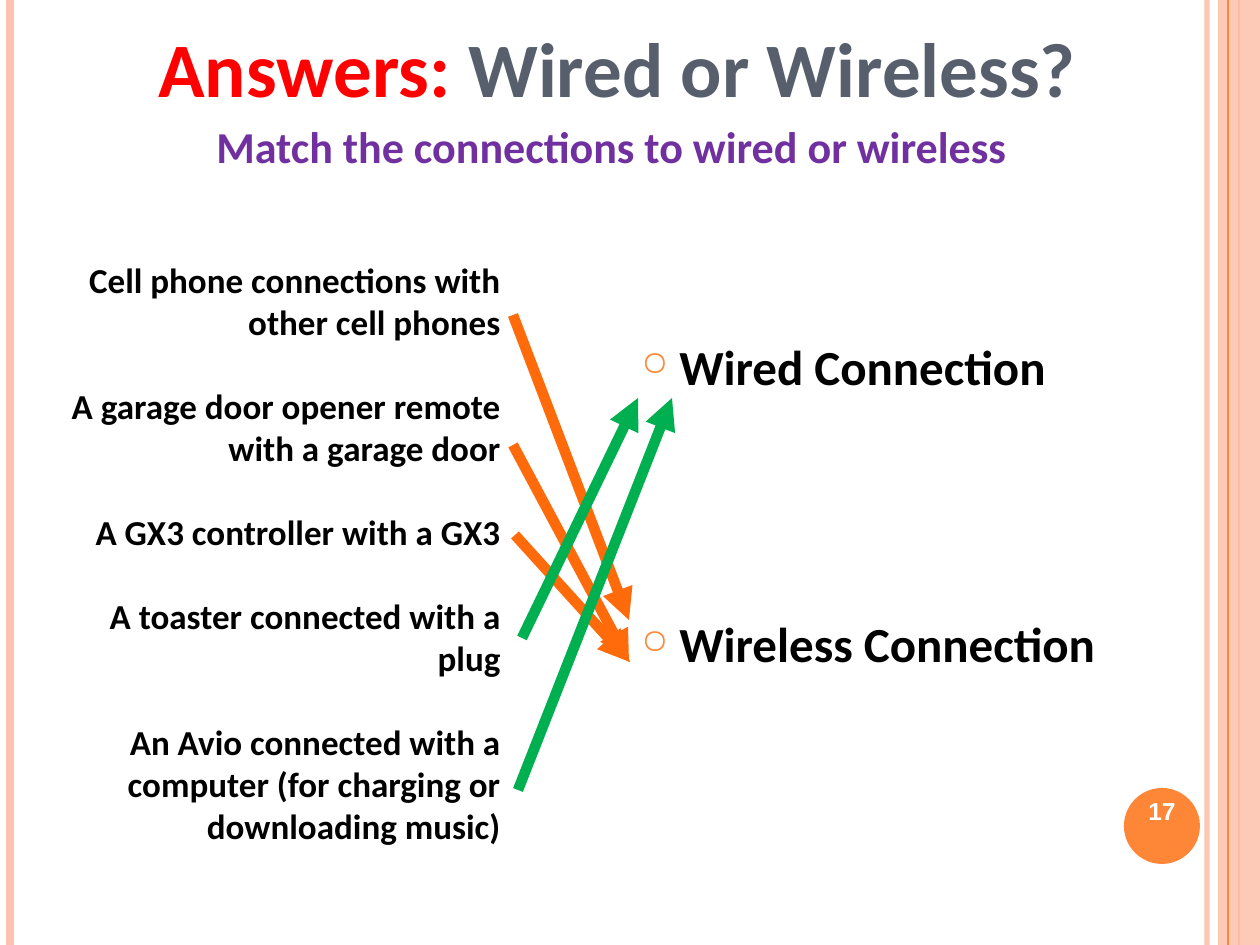
from dataclasses import dataclass
from typing import Optional

from lxml import etree
from pptx import Presentation
from pptx.dml.color import RGBColor
from pptx.enum import shapes, text
from pptx.oxml.ns import qn
from pptx.util import Emu, Pt

EMU_PER_PX = 914400 / 126
WIDTH, HEIGHT = 1260, 945

PEACH = RGBColor(0xFE, 0xC3, 0xAE)
ORANGE = RGBColor(0xFE, 0x86, 0x37)
WIRELESS = RGBColor(0xFF, 0x6B, 0x0A)
WIRED = RGBColor(0x00, 0xB0, 0x50)
RED = RGBColor(0xFF, 0x00, 0x00)
SLATE = RGBColor(0x57, 0x5F, 0x6D)
PURPLE = RGBColor(0x70, 0x30, 0xA0)
BLACK = RGBColor(0x00, 0x00, 0x00)
WHITE = RGBColor(0xFF, 0xFF, 0xFF)


@dataclass
class Line:
    start: tuple[int, int]
    end: tuple[int, int]
    color: RGBColor
    width: float = 6
    arrow: bool = True
    alpha: int = 100


@dataclass
class Span:
    words: str
    color: RGBColor


def stripe(x: int, color: RGBColor, width: float, alpha: int = 100) -> Line:
    return Line((x, 0), (x, HEIGHT), color, width, False, alpha)


LEFT_STRIPES = [stripe(1207, PEACH, 3, 93), stripe(10, PEACH, 4.5),
                stripe(1239, ORANGE, 1.5)]
EDGE_STRIPE = stripe(1228, ORANGE, 0.75)
ANSWERS = [
    Line((513, 315), (629, 620), WIRELESS),
    Line((513, 445), (629, 662), WIRELESS),
    Line((515, 535), (630, 662), WIRELESS),
    Line((522, 638), (638, 398), WIRED),
    Line((518, 790), (672, 398), WIRED),
]
DEVICES = [
    "Cell phone connections with other cell phones",
    "A garage door opener remote with a garage door",
    "A GX3 controller with a GX3",
    "A toaster connected with a plug",
    "An Avio connected with a computer (for charging or downloading music)",
]
CONNECTIONS = ["Wired Connection", "Wireless Connection"]


def px(length: int) -> Emu:
    return Emu(round(length * EMU_PER_PX))


def set_alpha(properties, percent: int) -> None:
    """Make every colour below the given properties element see-through."""
    for color in properties.iter(qn("a:srgbClr")):
        etree.SubElement(color, qn("a:alpha"), val=str(percent * 1000))


def draw_line(page, line: Line) -> None:
    connector = page.shapes.add_connector(
        shapes.MSO_CONNECTOR.STRAIGHT, *map(px, line.start + line.end))
    connector.line.color.rgb = line.color
    connector.line.width = Pt(line.width)
    properties = connector._element.spPr
    if line.alpha < 100:
        set_alpha(properties, line.alpha)
    if line.arrow:
        etree.SubElement(properties.find(qn("a:ln")), qn("a:tailEnd"), type="triangle")
    etree.SubElement(properties, qn("a:effectLst"))


def draw_shape(page, kind, bounds: tuple[int, int, int, int], color: RGBColor,
               alpha: int = 100) -> None:
    shape = page.shapes.add_shape(kind, *map(px, bounds))
    shape.shadow.inherit = False
    shape.fill.solid()
    shape.fill.fore_color.rgb = color
    shape.line.fill.background()
    if alpha < 100:
        set_alpha(shape._element.spPr, alpha)


def add_bullet(para) -> None:
    properties = para._p.get_or_add_pPr()
    properties.set("marL", str(px(38)))
    properties.set("indent", str(-px(38)))
    color = etree.SubElement(properties, qn("a:buClr"))
    etree.SubElement(color, qn("a:srgbClr"), val=str(ORANGE))
    etree.SubElement(properties, qn("a:buSzPct"), val="70000")
    etree.SubElement(properties, qn("a:buChar"), char="○")


def draw_text(page, bounds: tuple[int, int, int, int], paras: list[list[Span]], *,
              size: float, font: str = "Calibri", align=text.PP_ALIGN.CENTER,
              anchor=text.MSO_ANCHOR.TOP, gap: float = 0,
              spacing: Optional[float] = None, bullets: bool = False) -> None:
    """Write bold paragraphs with a gap in points between them."""
    box = page.shapes.add_textbox(*map(px, bounds))
    frame = box.text_frame
    frame.word_wrap = True
    frame.vertical_anchor = anchor
    for index, spans in enumerate(paras):
        para = frame.add_paragraph() if index else frame.paragraphs[0]
        para.alignment = align
        if spacing:
            para.line_spacing = Pt(spacing)
        if index:
            para.space_before = Pt(gap)
        if bullets:
            add_bullet(para)
        for span in spans:
            run = para.add_run()
            run.text = span.words
            run.font.name = font
            run.font.size = Pt(size)
            run.font.bold = True
            run.font.color.rgb = span.color


def main() -> None:
    deck = Presentation()
    deck.slide_width, deck.slide_height = px(WIDTH), px(HEIGHT)
    page = deck.slides.add_slide(deck.slide_layouts[6])

    for line in LEFT_STRIPES:
        draw_line(page, line)
    draw_shape(page, shapes.MSO_SHAPE.RECTANGLE, (1218, 0, 42, HEIGHT), PEACH, 87)
    draw_line(page, EDGE_STRIPE)
    draw_shape(page, shapes.MSO_SHAPE.OVAL, (1124, 788, 76, 76), ORANGE)
    draw_text(page, (1120, 790, 84, 72), [[Span("17", WHITE)]], size=14, font="Arial")

    draw_text(page, (57, 110, 1109, 69),
              [[Span("Match the connections to wired or wireless", PURPLE)]],
              size=25.2, anchor=text.MSO_ANCHOR.BOTTOM)
    draw_text(page, (57, 252, 456, 640), [[Span(words, BLACK)] for words in DEVICES],
              size=20, align=text.PP_ALIGN.RIGHT, gap=24, spacing=24)
    draw_text(page, (629, 330, 529, 378), [[Span(words, BLACK)] for words in CONNECTIONS],
              size=28, align=text.PP_ALIGN.LEFT, gap=125, bullets=True)
    draw_text(page, (26, 21, 1183, 98),
              [[Span("Answers: ", RED), Span("Wired or Wireless?", SLATE)]],
              size=44, anchor=text.MSO_ANCHOR.BOTTOM)
    for line in ANSWERS:
        draw_line(page, line)

    deck.save("out.pptx")


if __name__ == "__main__":
    main()
